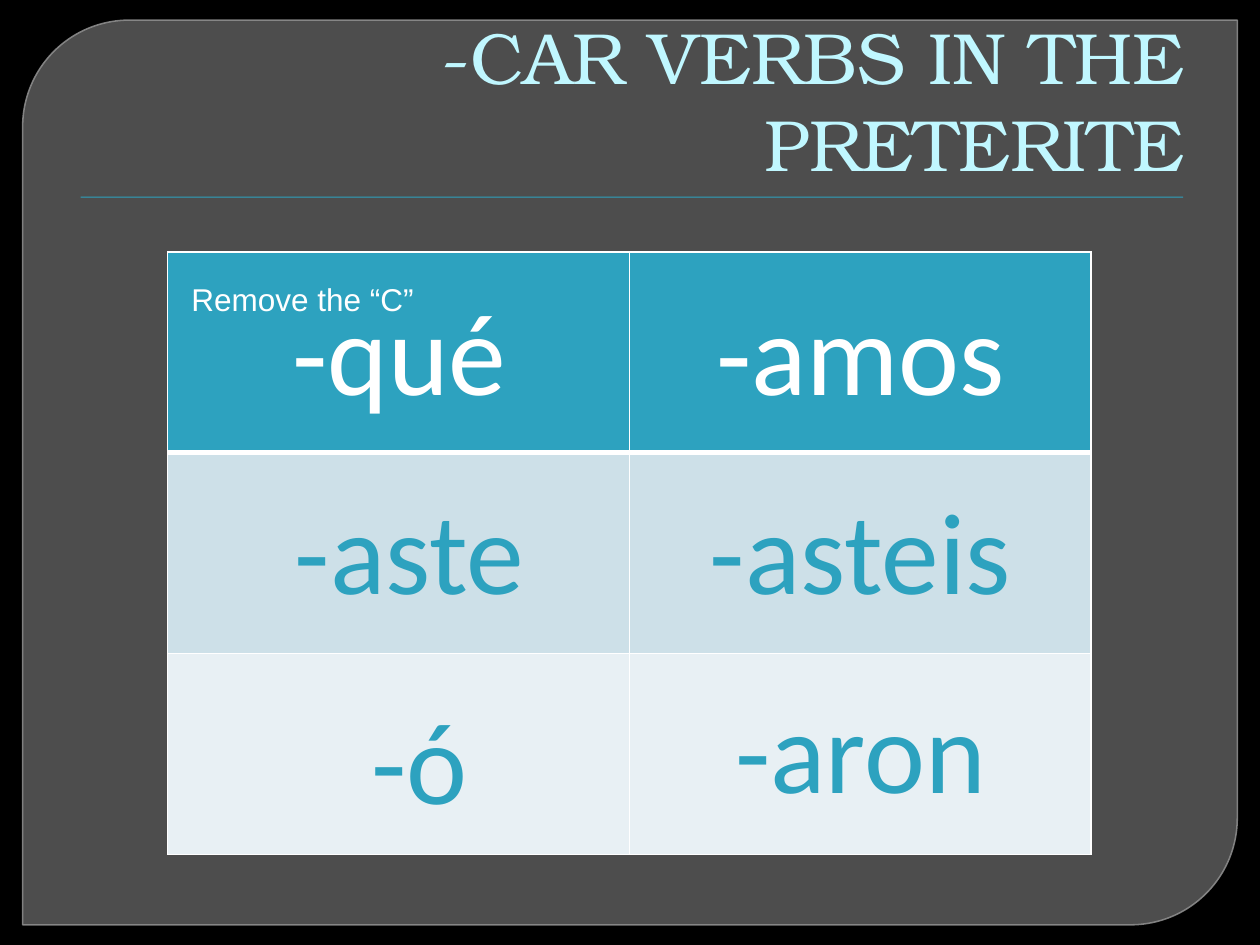
"""Build a slide on the preterite endings of -car verbs."""
from dataclasses import dataclass

from pptx import Presentation
from pptx.dml.color import RGBColor
from pptx.enum.shapes import MSO_SHAPE as Preset
from pptx.enum.text import MSO_ANCHOR as Anchor, MSO_AUTO_SIZE as AutoSize, PP_ALIGN as Align
from pptx.oxml.ns import qn
from pptx.util import Inches, Pt
from lxml.etree import SubElement

COLORS = {
    "background": "000000",
    "panel": "777777",
    "outline": "8E8E8E",
    "teal": "2DA2BF",
    "title": "C0F7FF",
    "white": "FFFFFF",
    "band": "CDE0E8",
    "light": "E8F0F4",
}
ROW_FILLS = ("teal", "band", "light")


@dataclass(frozen=True)
class Label:
    text: str
    left: float
    top: float
    color: str
    width: float = 3
    height: float = 1.21
    size: float = 66
    font: str = "Calibri"
    align: Align = Align.CENTER


LABELS = (
    Label("-qué", 1.67, 2.17, "white"),
    Label("-aste", 1.75, 3.75, "teal"),
    Label("-ó", 1.83, 5.42, "teal"),
    Label("-amos", 5.33, 2.17, "white"),
    Label("-aron", 5.33, 5.33, "teal"),
    Label("Remove the “C”", 1.42, 2.17, "white", 2.75, 0.4, 18, "Arial", Align.LEFT),
    Label("-asteis", 5.33, 3.75, "teal"),
)


def rgb(name: str) -> RGBColor:
    return RGBColor.from_string(COLORS[name])


def set_alpha(fill_parent, percent: int) -> None:
    color = fill_parent.find(qn("a:solidFill"))[0]
    SubElement(color, qn("a:alpha"), val=str(percent * 1000))


def add_run(paragraph, text: str, font: str, size: float, color: str) -> None:
    run = paragraph.add_run()
    run.text = text
    run.font.name = font
    run.font.size = Pt(size)
    run.font.color.rgb = rgb(color)


def add_filled_shape(slide, preset: Preset, box: tuple, color: str):
    shape = slide.shapes.add_shape(preset, *map(Inches, box))
    shape.shadow.inherit = False
    shape.fill.solid()
    shape.fill.fore_color.rgb = rgb(color)
    shape.line.fill.background()
    return shape


def add_frame(slide) -> None:
    panel = add_filled_shape(slide, Preset.ROUND_2_DIAG_RECTANGLE, (0.18, 0.16, 9.64, 7.18), "panel")
    panel.adjustments[0] = 0.118
    panel.adjustments[1] = 0
    panel.line.color.rgb = rgb("outline")
    panel.line.width = Pt(0.87)
    properties = panel.element.spPr
    set_alpha(properties, 65)
    set_alpha(properties.find(qn("a:ln")), 88)
    add_filled_shape(slide, Preset.RECTANGLE, (0.64, 1.56, 8.75, 0.01), "teal")


def format_title(slide, text: str) -> None:
    title = slide.shapes.title
    title.element.getparent().append(title.element)
    title.left, title.top, title.width, title.height = map(Inches, (0.5, 0.28, 9, 1.25))
    frame = title.text_frame
    frame.word_wrap = True
    frame.auto_size = AutoSize.NONE
    frame.vertical_anchor = Anchor.BOTTOM
    paragraph = frame.paragraphs[0]
    paragraph.alignment = Align.RIGHT
    add_run(paragraph, text, "TeX Gyre Bonum", 41.4, "title")


def set_borders(cell, widths: dict[str, float]) -> None:
    properties = cell._tc.get_or_add_tcPr()
    for side, width in widths.items():
        line = SubElement(properties, qn(f"a:ln{side}"), w=str(Pt(width)))
        fill = SubElement(line, qn("a:solidFill"))
        SubElement(fill, qn("a:srgbClr"), val=COLORS["white"])


def add_grid(slide) -> None:
    box = map(Inches, (1.33, 2, 7.33, 4.78))
    table = slide.shapes.add_table(len(ROW_FILLS), 2, *box).table
    for index, color in enumerate(ROW_FILLS):
        top = 3 if index == 1 else 1
        bottom = 3 if index == 0 else 1
        for cell in table.rows[index].cells:
            set_borders(cell, {"L": 1, "R": 1, "T": top, "B": bottom})
            cell.fill.solid()
            cell.fill.fore_color.rgb = rgb(color)


def add_label(slide, label: Label) -> None:
    box = map(Inches, (label.left, label.top, label.width, label.height))
    frame = slide.shapes.add_textbox(*box).text_frame
    frame.word_wrap = True
    frame.auto_size = AutoSize.SHAPE_TO_FIT_TEXT
    paragraph = frame.paragraphs[0]
    paragraph.alignment = label.align
    add_run(paragraph, label.text, label.font, label.size, label.color)


def main() -> None:
    presentation = Presentation()
    presentation.slide_width, presentation.slide_height = Inches(10), Inches(7.5)
    slide = presentation.slides.add_slide(presentation.slide_layouts.get_by_name("Title Only"))
    slide.background.fill.solid()
    slide.background.fill.fore_color.rgb = rgb("background")
    add_frame(slide)
    format_title(slide, "-CAR VERBS IN THE PRETERITE")
    add_grid(slide)
    for label in LABELS:
        add_label(slide, label)
    presentation.save("out.pptx")


if __name__ == "__main__":
    main()
